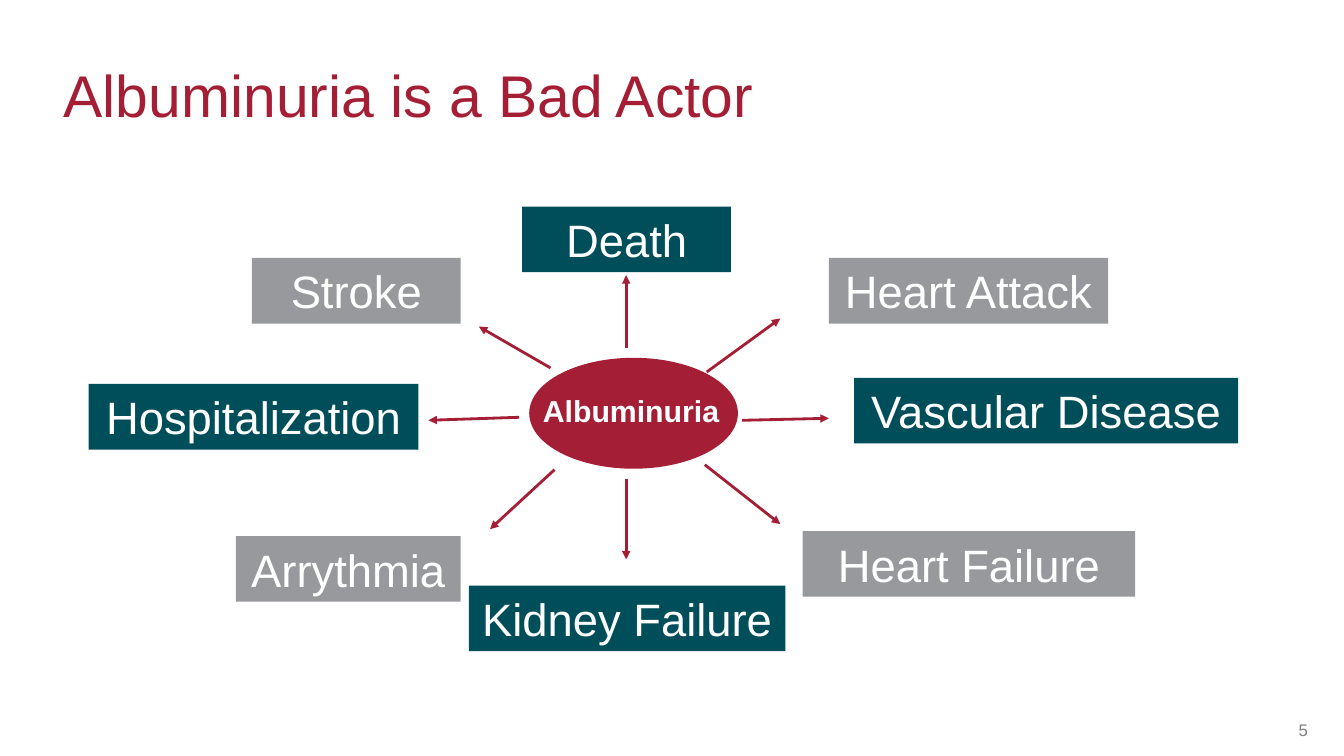
from lxml import etree
from pptx import Presentation
from pptx import util as u
from pptx.dml.color import RGBColor
from pptx.enum import shapes, text
from pptx.oxml.ns import qn

COLORS = {"red": "A41F35", "teal": "004E59", "grey": "98999D",
          "white": "FFFFFF", "number": "808080"}

prs = Presentation()
prs.slide_width, prs.slide_height = u.Inches(13.33), u.Inches(7.5)
s = prs.slides.add_slide(prs.slide_layouts[5])


def share(*values):
    """Turn alternating x, y percentages of the slide into lengths."""
    sides = (prs.slide_width, prs.slide_height)
    return [u.Emu(round(v * sides[i % 2] / 100)) for i, v in enumerate(values)]


def write(sp, words, size, color, align, anchor, bold=False):
    tf = sp.text_frame
    tf.text = words
    tf.auto_size = text.MSO_AUTO_SIZE.NONE
    tf.vertical_anchor = anchor
    p = tf.paragraphs[0]
    p.alignment = align
    font = p.runs[0].font
    font.name, font.size, font.bold = "Arial", u.Pt(size), bold
    font.color.rgb = RGBColor.from_string(COLORS[color])


LEFT, CENTER, RIGHT = text.PP_ALIGN.LEFT, text.PP_ALIGN.CENTER, text.PP_ALIGN.RIGHT
MIDDLE, BOTTOM = text.MSO_ANCHOR.MIDDLE, text.MSO_ANCHOR.BOTTOM

# Title and slide number
title = s.shapes.title
title.left, title.top, title.width, title.height = share(3.98, 6.4, 92.05, 12)
write(title, "Albuminuria is a Bad Actor", 42, "red", LEFT, MIDDLE)

number = s.shapes.add_textbox(*share(94, 93.47, 4.05, 4.4))
write(number, "5", 12, "number", RIGHT, BOTTOM)
number.text_frame.margin_bottom = 0

# Hub
hub = s.shapes.add_shape(shapes.MSO_SHAPE.OVAL, *share(39.38, 47.33, 15.53, 14.67))
hub.shadow.inherit = False
hub.fill.solid()
hub.fill.fore_color.rgb = RGBColor.from_string(COLORS["red"])
hub.line.fill.background()
label = s.shapes.add_textbox(*share(39.38, 51.2, 15.15, 6.13))
write(label, "Albuminuria", 21.6, "white", CENTER, MIDDLE, bold=True)

# Arrows from the hub: start x, y and end x, y
arrows = [
    (46.59, 46, 46.59, 36.4),
    (46.59, 63.33, 46.59, 74),
    (55.21, 55.6, 61.67, 55.33),
    (38.63, 55.2, 31.88, 55.6),
    (52.59, 49.2, 58.06, 42.13),
    (52.44, 61.47, 58.06, 69.33),
    (40.96, 48.67, 35.63, 43.2),
    (41.26, 62.13, 36.46, 70),
]
for ends in arrows:
    arrow = s.shapes.add_connector(shapes.MSO_CONNECTOR.STRAIGHT, *share(*ends))
    arrow.line.width = u.Pt(2)
    arrow.line.color.rgb = RGBColor.from_string(COLORS["red"])
    etree.SubElement(arrow.line._get_or_add_ln(), qn("a:tailEnd"), type="triangle")
    etree.SubElement(arrow._element.spPr, qn("a:effectLst"))

# Outcomes: name, fill, left, top, width
BOX_HEIGHT = 8.67
outcomes = [
    ("Death", "teal", 38.86, 27.33, 15.53),
    ("Vascular Disease", "teal", 63.54, 50, 28.58),
    ("Kidney Failure", "teal", 34.88, 77.47, 23.56),
    ("Hospitalization", "teal", 6.6, 50.8, 24.53),
    ("Stroke", "grey", 18.75, 34.13, 15.53),
    ("Heart Attack", "grey", 61.67, 34.13, 20.78),
    ("Heart Failure", "grey", 59.71, 70.27, 24.76),
    ("Arrythmia", "grey", 17.55, 70.93, 16.73),
]
for name, fill, x, y, width in outcomes:
    box = s.shapes.add_shape(shapes.MSO_SHAPE.RECTANGLE, *share(x, y, width, BOX_HEIGHT))
    box.shadow.inherit = False
    box.fill.solid()
    box.fill.fore_color.rgb = RGBColor.from_string(COLORS[fill])
    box.line.fill.background()
    write(box, name, 32.4, "white", CENTER, MIDDLE)
    box.text_frame.word_wrap = False

for sp in (number, label):
    sp.text_frame.word_wrap = True

prs.save("out.pptx")
